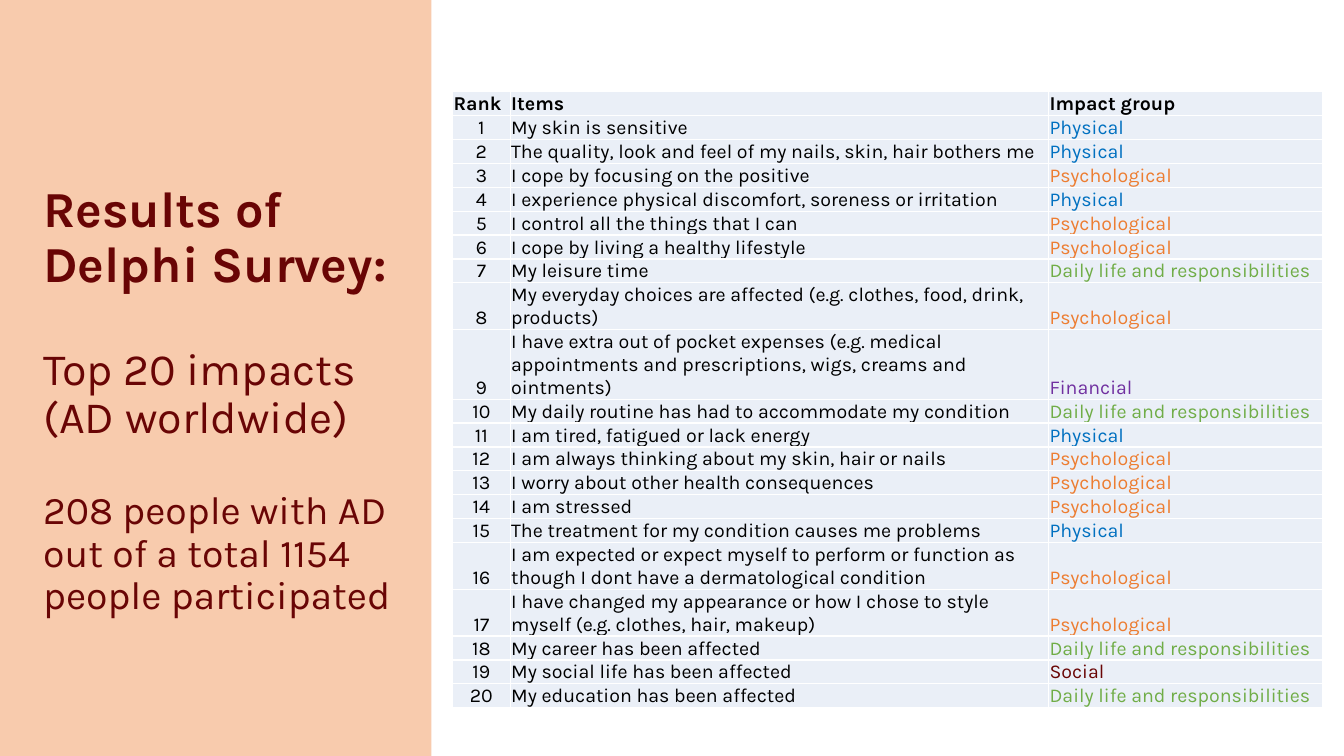
"""Build the slide on the top 20 impacts ranked in the Delphi survey."""
from dataclasses import dataclass

from lxml.etree import SubElement
from pptx import Presentation
from pptx.dml.color import RGBColor as Color
from pptx.enum.shapes import MSO_SHAPE as Preset
from pptx.enum.text import MSO_ANCHOR as Anchor, PP_ALIGN as Align
from pptx.oxml.ns import qn
from pptx.util import Inches, Pt

WIDTH, HEIGHT = Inches(13.33), Inches(7.5)
FONT = "Karla"
COLOURS = {
    "panel": "F8CBAD",
    "title": "690505",
    "cell": "EAEFF7",
    "border": "FFFFFF",
    "text": "000000",
    "Physical": "0070C0",
    "Psychological": "ED7D31",
    "Daily life and responsibilities": "70AD47",
    "Financial": "7030A0",
    "Social": "690505",
}
CELL_FORMAT = {
    "margin_left": Inches(0.01),
    "margin_right": Inches(0.01),
    "margin_top": Inches(0.01),
    "margin_bottom": 0,
    "vertical_anchor": Anchor.BOTTOM,
}
TABLE_FORMAT = {"first_row": False, "horz_banding": False}
TITLE_FORMAT = {"word_wrap": True, "vertical_anchor": Anchor.MIDDLE}
COLUMN_SHARES = (4.28, 40.06, 20.4)
LINE_SHARE = 3.07


@dataclass(frozen=True)
class Area:
    """Hold a region in percent of the slide's width and height."""
    left: float
    top: float
    width: float
    height: float

    def place(self) -> tuple[int, int, int, int]:
        """Return the region in slide units."""
        return (across(self.left), down(self.top), across(self.width), down(self.height))


@dataclass(frozen=True)
class Block:
    """Hold one paragraph of the title and the gap above it in points."""
    text: str
    size: int
    bold: bool = False
    gap: int = 0


@dataclass(frozen=True)
class Impact:
    """Hold one ranked item, its group and its number of text lines."""
    item: str
    group: str
    lines: int = 1


PANEL = Area(0, 0, 32.1, 100)
TITLE = Area(2.48, 8.53, 31.2, 89.07)
TABLE_LEFT, TABLE_TOP = 33.68, 12.13
HEADINGS = ("Rank", "Items", "Impact group")

BLOCKS = (
    Block("Results of\vDelphi Survey:", 36, bold=True),
    Block("Top 20 impacts\v(AD worldwide)", 32, gap=38),
    Block("208 people with AD out of a total 1154 people participated", 28, gap=34),
)

PHYSICAL, PSYCHOLOGICAL, DAILY = "Physical", "Psychological", "Daily life and responsibilities"
IMPACTS = (
    Impact("My skin is sensitive", PHYSICAL),
    Impact("The quality, look and feel of my nails, skin, hair bothers me", PHYSICAL),
    Impact("I cope by focusing on the positive", PSYCHOLOGICAL),
    Impact("I experience physical discomfort, soreness or irritation", PHYSICAL),
    Impact("I control all the things that I can", PSYCHOLOGICAL),
    Impact("I cope by living a healthy lifestyle", PSYCHOLOGICAL),
    Impact("My leisure time", DAILY),
    Impact("My everyday choices are affected (e.g. clothes, food, drink, products)",
           PSYCHOLOGICAL, 2),
    Impact("I have extra out of pocket expenses (e.g. medical appointments and "
           "prescriptions, wigs, creams and ointments)", "Financial", 3),
    Impact("My daily routine has had to accommodate my condition", DAILY),
    Impact("I am tired, fatigued or lack energy", PHYSICAL),
    Impact("I am always thinking about my skin, hair or nails", PSYCHOLOGICAL),
    Impact("I worry about other health consequences", PSYCHOLOGICAL),
    Impact("I am stressed", PSYCHOLOGICAL),
    Impact("The treatment for my condition causes me problems", PHYSICAL),
    Impact("I am expected or expect myself to perform or function as though I dont "
           "have a dermatological condition", PSYCHOLOGICAL, 2),
    Impact("I have changed my appearance or how I chose to style myself "
           "(e.g. clothes, hair, makeup)", PSYCHOLOGICAL, 2),
    Impact("My career has been affected", DAILY),
    Impact("My social life has been affected", "Social"),
    Impact("My education has been affected", DAILY),
)


def across(share: float) -> int:
    """Turn a percentage of the slide's width into a length."""
    return round(WIDTH * share / 100)


def down(share: float) -> int:
    """Turn a percentage of the slide's height into a length."""
    return round(HEIGHT * share / 100)


def colour(name: str) -> Color:
    """Look up a named colour."""
    return Color.from_string(COLOURS[name])


def apply(target: object, values: dict) -> None:
    """Set every attribute in a dict of format values."""
    for name, value in values.items():
        setattr(target, name, value)


def style_font(font, size: int, bold: bool, name: str) -> None:
    """Give a font its face, size, weight and colour."""
    apply(font, {"name": FONT, "size": Pt(size), "bold": bold})
    font.color.rgb = colour(name)


def draw_panel(page) -> None:
    """Draw the coloured band on the left."""
    panel = page.shapes.add_shape(Preset.RECTANGLE, *PANEL.place())
    panel.shadow.inherit = False
    panel.fill.solid()
    panel.fill.fore_color.rgb = colour("panel")
    panel.line.fill.background()


def draw_title(page) -> None:
    """Write the title blocks over the band."""
    frame = page.shapes.add_textbox(*TITLE.place()).text_frame
    apply(frame, TITLE_FORMAT)
    for index, block in enumerate(BLOCKS):
        para = frame.add_paragraph() if index else frame.paragraphs[0]
        para.text = block.text
        apply(para, {"line_spacing": 0.9, "space_before": Pt(block.gap)})
        for span in para.runs:
            style_font(span.font, block.size, block.bold, "title")


def draw_borders(cell) -> None:
    """Line all four sides of a cell."""
    properties = cell._tc.get_or_add_tcPr()
    for side in ("a:lnL", "a:lnR", "a:lnT", "a:lnB"):
        line = SubElement(properties, qn(side), w=str(Pt(1)))
        SubElement(SubElement(line, qn("a:solidFill")), qn("a:srgbClr"), val=COLOURS["border"])


def fill_cell(cell, text: str, name: str, bold: bool, align: Align) -> None:
    """Write and format one table cell."""
    apply(cell, CELL_FORMAT)
    draw_borders(cell)
    cell.fill.solid()
    cell.fill.fore_color.rgb = colour("cell")
    para = cell.text_frame.paragraphs[0]
    para.alignment = align
    span = para.add_run()
    span.text = text
    style_font(span.font, 14, bold, name)


def draw_table(page) -> None:
    """Draw the ranking with one row per impact."""
    lines = [1] + [impact.lines for impact in IMPACTS]
    area = Area(TABLE_LEFT, TABLE_TOP, sum(COLUMN_SHARES), LINE_SHARE * sum(lines))
    table = page.shapes.add_table(len(lines), len(HEADINGS), *area.place()).table
    apply(table, TABLE_FORMAT)
    for column, share in zip(table.columns, COLUMN_SHARES):
        column.width = across(share)
    for row, count in zip(table.rows, lines):
        row.height = down(LINE_SHARE * count)
    for index, heading in enumerate(HEADINGS):
        fill_cell(table.cell(0, index), heading, "text", True, Align.LEFT)
    for rank, impact in enumerate(IMPACTS, 1):
        fill_cell(table.cell(rank, 0), str(rank), "text", False, Align.CENTER)
        fill_cell(table.cell(rank, 1), impact.item, "text", False, Align.LEFT)
        fill_cell(table.cell(rank, 2), impact.group, impact.group, False, Align.LEFT)


def main() -> None:
    """Build and save the deck."""
    deck = Presentation()
    apply(deck, {"slide_width": WIDTH, "slide_height": HEIGHT})
    page = deck.slides.add_slide(deck.slide_layouts[6])
    for draw in (draw_panel, draw_table, draw_title):
        draw(page)
    deck.save("out.pptx")


if __name__ == "__main__":
    main()
